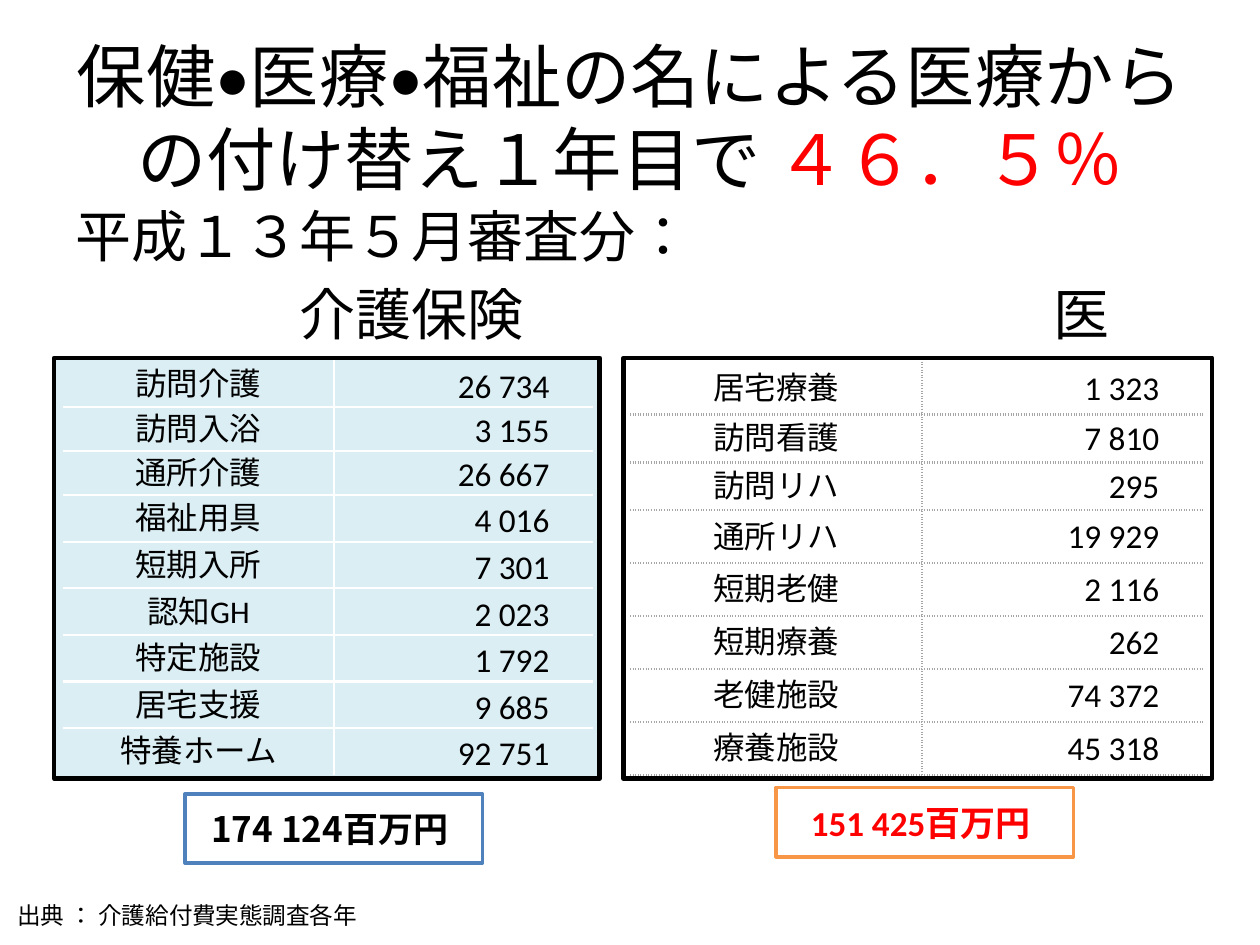
from lxml import etree
from pptx import Presentation
from pptx.dml.color import RGBColor
from pptx.enum.lang import MSO_LANGUAGE_ID as LANG
from pptx.enum.shapes import MSO_SHAPE as SHAPE
from pptx.enum.text import MSO_ANCHOR as ANCHOR, PP_ALIGN as ALIGN
from pptx.oxml.ns import qn
from pptx.util import Inches, Pt

COLS, ROWS = 100, 75
UNIT = Inches(10) // COLS
NO_GRID_STYLE = "{2D5ABB26-0587-4C30-8999-92F81FD0307C}"

CARE = [("訪問介護", "26 734"), ("訪問入浴", "3 155"), ("通所介護", "26 667"),
        ("福祉用具", "4 016"), ("短期入所", "7 301"), ("認知GH", "2 023"),
        ("特定施設", "1 792"), ("居宅支援", "9 685"), ("特養ホーム", "92 751")]
MEDICAL = [("居宅療養", "1 323"), ("訪問看護", "7 810"), ("訪問リハ", "295"),
           ("通所リハ", "19 929"), ("短期老健", "2 116"), ("短期療養", "262"),
           ("老健施設", "74 372"), ("療養施設", "45 318")]


def grid(*cells):
    return [round(c * UNIT) for c in cells]


def rgb(code):
    return RGBColor.from_string(code)


def add_run(p, text, size, color="000000", font="Calibri", bold=False):
    r = p.add_run()
    r.text = text
    r.font.size, r.font.bold, r.font.name = Pt(size), bold, font
    r.font.language_id = LANG.JAPANESE
    r.font.color.rgb = rgb(color)
    etree.SubElement(r.font._element, qn("a:ea")).set("typeface", font)


def add_text(tf, text, size, align=ALIGN.LEFT, anchor=ANCHOR.TOP, wrap=True, **fmt):
    """Fill the first paragraph of a text frame and return it."""
    tf.word_wrap, tf.vertical_anchor = wrap, anchor
    p = tf.paragraphs[0]
    p.alignment = align
    add_run(p, text, size, **fmt)
    return p


def add_box(s, box, line, width, fill=None):
    sp = s.shapes.add_shape(SHAPE.RECTANGLE, *grid(*box))
    sp.shadow.inherit = False
    if fill:
        sp.fill.solid()
        sp.fill.fore_color.rgb = rgb(fill)
    else:
        sp.fill.background()
    sp.line.color.rgb = rgb(line)
    sp.line.width = Pt(width)
    return sp


def add_title(s, box):
    tf = s.shapes.add_textbox(*grid(*box)).text_frame
    tf.margin_left, tf.margin_right = grid(0.5, 0.5)
    p = add_text(tf, "保健•医療•福祉の名による医療からの付け替え１年目で ", 39.6,
                 ALIGN.CENTER, ANCHOR.MIDDLE)
    add_run(p, "４６．５％", 39.6, "FF0000")


def add_headings(s, box, tabs):
    tf = s.shapes.add_textbox(*grid(*box)).text_frame
    first = add_text(tf, "平成１３年５月審査分：", 32)
    second = tf.add_paragraph()
    add_run(second, "\t介護保険\t医", 32)
    for p in (first, second):
        p.space_before = Pt(6.4)
    stops = etree.SubElement(second._p.get_or_add_pPr(), qn("a:tabLst"))
    for pos in grid(*tabs):
        etree.SubElement(stops, qn("a:tab"), pos=str(pos), algn="l")


def set_border(cell, sides, color, dash):
    tcPr = cell._tc.get_or_add_tcPr()
    for i, side in enumerate(side for side in "LRTB" if side in sides):
        ln = etree.Element(qn(f"a:ln{side}"), w=str(Pt(1.5)))
        fill = etree.SubElement(ln, qn("a:solidFill"))
        etree.SubElement(fill, qn("a:srgbClr"), val=color)
        etree.SubElement(ln, qn("a:prstDash"), val=dash)
        tcPr.insert(i, ln)


def add_cost_table(s, box, data, widths, heights, anchor, color, dash, closed):
    """Names and costs with inner rules; closed adds a rule under the last row."""
    frame = s.shapes.add_table(len(data), 2, *grid(*box))
    table = frame.table
    table.first_row = table.horz_banding = False
    table._tbl.tblPr.find(qn("a:tableStyleId")).text = NO_GRID_STYLE
    for column, width in zip(table.columns, grid(*widths)):
        column.width = width
    formats = [(18, ALIGN.CENTER, ANCHOR.MIDDLE, 0.1), (19, ALIGN.RIGHT, anchor, 3.5)]
    last = len(data) - 1
    for i, (record, height) in enumerate(zip(data, grid(*heights))):
        table.rows[i].height = height
        sides = ("T" if i else "") + ("B" if i < last or closed else "")
        for j, (text, (size, align, anc, right)) in enumerate(zip(record, formats)):
            cell = table.cell(i, j)
            cell.margin_left, cell.margin_top, cell.margin_right, cell.margin_bottom = \
                grid(0.1, 0.1, right, 0)
            cell.fill.background()
            add_text(cell.text_frame, text, size, align)
            cell.vertical_anchor = anc
            set_border(cell, sides + "RL"[j], color, dash)


def add_total(s, box, text, line, fill=None, **fmt):
    sp = add_box(s, box, line, 2, fill)
    add_text(sp.text_frame, text, 20, ALIGN.CENTER, ANCHOR.MIDDLE, bold=True, **fmt)


def add_source(s, box):
    tf = s.shapes.add_textbox(*grid(*box)).text_frame
    add_text(tf, "出典 ： 介護給付費実態調査各年", 13.5)


def main():
    prs = Presentation()
    prs.slide_width, prs.slide_height = grid(COLS, ROWS)
    s = prs.slides.add_slide(prs.slide_layouts[6])

    add_title(s, (5, 3, 90, 12.5))
    add_headings(s, (5, 15.5, 88.1, 12.5), tabs=(17.8, 77.6))

    add_box(s, (4.3, 28.4, 43.3, 33.4), "000000", 2.5, "DBEEF4")
    add_cost_table(s, (5, 28.6, 42.1, 32.8), CARE, (21.5, 20.6),
                   [3.7] + [3.5] * 2 + [3.7] * 6, ANCHOR.BOTTOM,
                   "FFFFFF", "solid", closed=False)
    add_total(s, (14.7, 63, 23.6, 5.5), "174 124百万円 ", "4F81BD",
              font="Noto Sans CJK JP", wrap=False)

    add_box(s, (49.5, 28.4, 46.7, 33.4), "000000", 2.5, "FFFFFF")
    add_cost_table(s, (50, 28.7, 45.5, 32.6), MEDICAL, (23.2, 22.3),
                   [4.2] + [3.8] * 2 + [4.2] * 5, ANCHOR.MIDDLE,
                   "A6A6A6", "sysDot", closed=True)
    add_total(s, (61.6, 62.5, 23.6, 5.5), "151 425百万円 ", "F79646", "FFFFFF",
              color="FF0000")

    add_source(s, (0.4, 71, 33.3, 3.3))
    prs.save("out.pptx")


if __name__ == "__main__":
    main()
